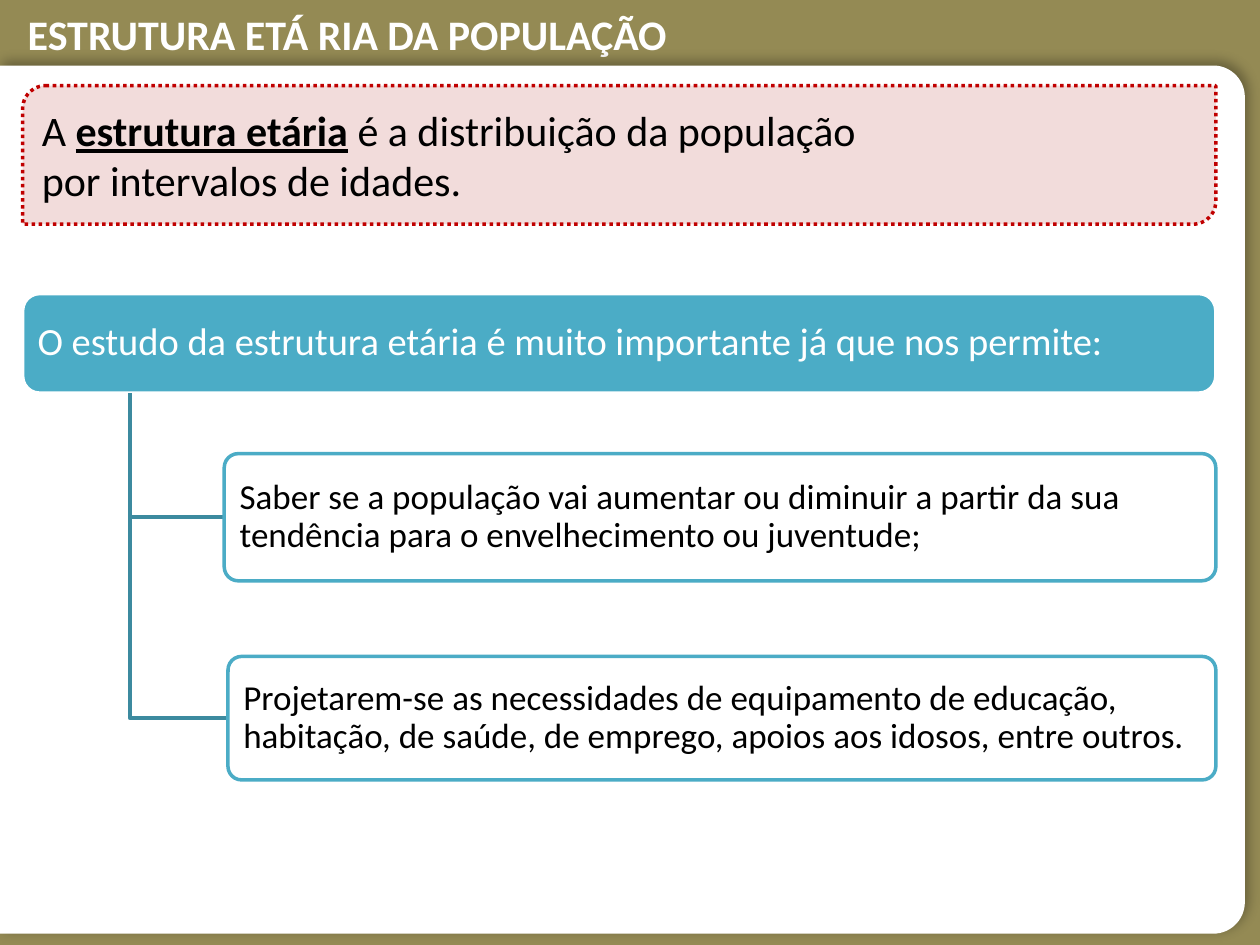
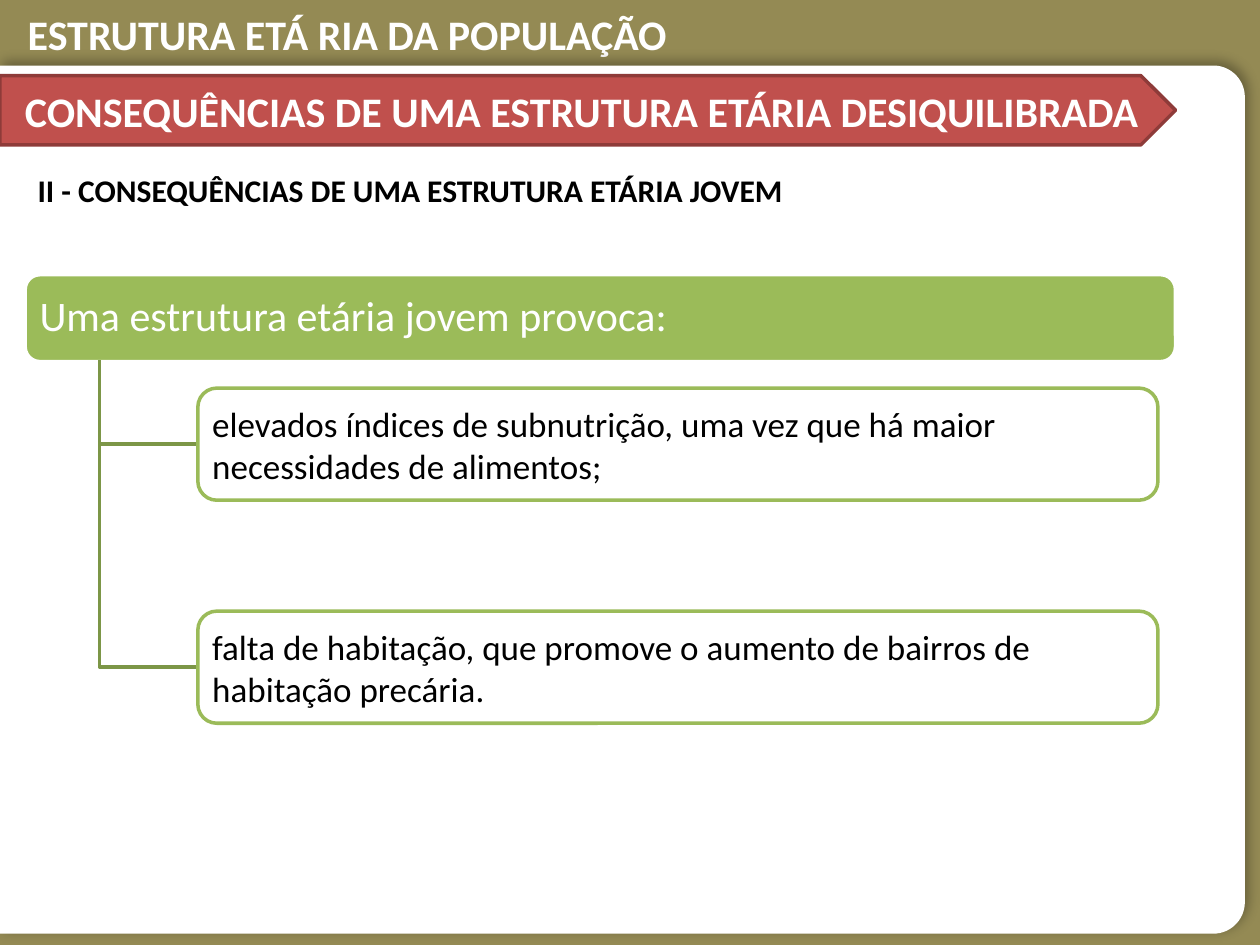
from math import cos, pi, sin

from lxml.etree import SubElement
from pptx import Presentation
from pptx.dml.color import RGBColor
from pptx.enum.dml import MSO_LINE
from pptx.enum.shapes import MSO_SHAPE
from pptx.enum.text import MSO_ANCHOR, MSO_AUTO_SIZE, PP_ALIGN
from pptx.oxml.ns import qn
from pptx.util import Inches, Pt

FONT = "Calibri"
WHITE = RGBColor(0xFF, 0xFF, 0xFF)
BLACK = RGBColor(0x00, 0x00, 0x00)
OLIVE = RGBColor(0x94, 0x8A, 0x54)
TEAL = RGBColor(0x4B, 0xAC, 0xC6)
DARK_TEAL = RGBColor(0x3C, 0x8A, 0x9F)
GREEN = RGBColor(0x9B, 0xBB, 0x59)
DARK_GREEN = RGBColor(0x7C, 0x96, 0x47)
RED = RGBColor(0xC0, 0x50, 0x4D)
DARK_RED = RGBColor(0x8E, 0x3B, 0x39)
PINK = RGBColor(0xF2, 0xDC, 0xDB)
BORDER_RED = RGBColor(0xC0, 0x00, 0x00)

TITLE = "ESTRUTURA ETÁ RIA DA POPULAÇÃO"
PANEL_TOP, PANEL_RIGHT, PANEL_BOTTOM, PANEL_RADIUS = 0.52, 9.88, 7.41, 0.25


class SlideBuilder:
    """Holds the deck's style and the slide being built."""

    def __init__(self, deck):
        self.deck = deck
        self.page = None

    def new_page(self):
        self.page = self.deck.slides.add_slide(self.deck.slide_layouts[5])
        fill = self.page.background.fill
        fill.solid()
        fill.fore_color.rgb = OLIVE
        title = self.page.shapes.title
        self.place(title, (0.12, 0.02, 8.03, 0.5))
        self.set_text(title, TITLE, 24, WHITE, bold=True, anchor=MSO_ANCHOR.TOP)
        self.panel()

    def place(self, shape, at):
        shape.left, shape.top, shape.width, shape.height = map(Inches, at)

    def set_text(self, shape, text, size, color, bold=False, anchor=MSO_ANCHOR.MIDDLE,
                 insets=(0.1, 0.05), spacing=None, align=PP_ALIGN.LEFT):
        frame = shape.text_frame
        frame.text = text
        frame.word_wrap = True
        frame.auto_size = MSO_AUTO_SIZE.NONE
        frame.vertical_anchor = anchor
        frame.margin_left = frame.margin_right = Inches(insets[0])
        frame.margin_top = frame.margin_bottom = Inches(insets[1])
        para = frame.paragraphs[0]
        para.alignment = align
        para.line_spacing = spacing
        for span in para.runs:
            self.style(span, size, color, bold)
        return para

    def style(self, span, size, color, bold=False, underline=False):
        font = span.font
        font.name, font.size, font.bold = FONT, Pt(size), bold
        font.underline = underline
        font.color.rgb = color

    def outline(self, points, closed):
        """Freeform through points given in inches."""
        corners = [(Inches(x), Inches(y)) for x, y in points]
        builder = self.page.shapes.build_freeform(*corners[0])
        builder.add_line_segments(corners[1:], close=closed)
        shape = builder.convert_to_shape()
        shape.shadow.inherit = False
        return shape

    def panel(self):
        """White sheet with rounded right corners and a soft shadow."""
        points = [(0, PANEL_BOTTOM), (0, PANEL_TOP)]
        center_x = PANEL_RIGHT - PANEL_RADIUS
        corners = ((PANEL_TOP + PANEL_RADIUS, -90), (PANEL_BOTTOM - PANEL_RADIUS, 0))
        for center_y, start in corners:
            for degrees in range(start, start + 91, 6):
                angle = degrees * pi / 180
                points.append((center_x + PANEL_RADIUS * cos(angle),
                               center_y + PANEL_RADIUS * sin(angle)))
        sheet = self.outline(points, closed=True)
        sheet.fill.solid()
        sheet.fill.fore_color.rgb = WHITE
        sheet.line.fill.background()
        effects = sheet._element.spPr.find(qn("a:effectLst"))
        shadow = SubElement(effects, qn("a:outerShdw"), blurRad=str(Pt(7)),
                            dist=str(Pt(3)), dir=str(315 * 60000))
        tint = SubElement(shadow, qn("a:srgbClr"), val="000000")
        SubElement(tint, qn("a:alpha"), val="30000")

    def box(self, kind, at, fill, line, radius=None):
        shape = self.page.shapes.add_shape(kind, *map(Inches, at))
        shape.shadow.inherit = False
        shape.fill.solid()
        shape.fill.fore_color.rgb = fill
        shape.line.color.rgb = line
        shape.line.width = Pt(2)
        if radius:
            shape.adjustments[0] = radius
        return shape

    def header(self, at, text, size, color, align=PP_ALIGN.LEFT):
        bar = self.box(MSO_SHAPE.ROUNDED_RECTANGLE, at, color, WHITE, 0.17)
        self.set_text(bar, text, size, WHITE, insets=(0.08, 0.06), spacing=0.9, align=align)

    def branch(self, trunk, start, at, text, line, border, radius, insets, spacing=None):
        """Elbow line from the trunk to a bordered card."""
        left, top, _, height = at
        middle = top + height / 2
        elbow = self.outline([(trunk, start), (trunk, middle), (left, middle)], closed=False)
        elbow.fill.background()
        elbow.line.color.rgb = line
        elbow.line.width = Pt(2)
        card = self.box(MSO_SHAPE.ROUNDED_RECTANGLE, at, WHITE, border, radius)
        self.set_text(card, text, 20, BLACK, insets=insets, spacing=spacing)

    def definition(self, at, before, term, after, last_line):
        box = self.box(MSO_SHAPE.ROUND_2_DIAG_RECTANGLE, at, PINK, BORDER_RED)
        box.line.dash_style = MSO_LINE.ROUND_DOT
        para = self.set_text(box, before, 24, BLACK)
        for text, strong in ((term, True), (after, False), (last_line, False)):
            if text == last_line:
                para.add_line_break()
            span = para.add_run()
            span.text = text
            self.style(span, 24, BLACK, strong, strong)

    def banner(self, at, text):
        arrow = self.box(MSO_SHAPE.PENTAGON, at, RED, DARK_RED)
        para = self.set_text(arrow, text, 24, WHITE, bold=True)
        para._p.get_or_add_pPr().set("marL", str(Inches(0.1)))

    def label(self, at, text):
        box = self.page.shapes.add_textbox(*map(Inches, at))
        self.set_text(box, text, 18, BLACK, bold=True)


def build_importance(builder):
    builder.new_page()
    builder.header((0.18, 2.33, 9.47, 0.79),
                   "O estudo da estrutura etária é muito importante já que nos permite:",
                   22, TEAL)
    cards = (
        ((1.78, 3.6, 7.87, 1.01), "Saber se a população vai aumentar ou diminuir a partir "
         "da sua tendência para o envelhecimento ou juventude;"),
        ((1.81, 5.21, 7.84, 0.98), "Projetarem-se as necessidades de equipamento de educação, "
         "habitação, de saúde, de emprego, apoios aos idosos, entre outros."),
    )
    for at, text in cards:
        builder.branch(1.03, 3.12, at, text, DARK_TEAL, TEAL, 0.11, (0.09, 0.07), 0.9)
    builder.definition((0.18, 0.68, 9.47, 1.1), "A ", "estrutura etária",
                       " é a distribuição da população", "por intervalos de idades.")


def build_consequences(builder):
    builder.new_page()
    builder.label((0.2, 1.23, 7.72, 0.55), "II - CONSEQUÊNCIAS DE UMA ESTRUTURA ETÁRIA JOVEM")
    builder.banner((0, 0.6, 9.33, 0.55), "CONSEQUÊNCIAS DE UMA ESTRUTURA ETÁRIA DESIQUILIBRADA")
    builder.header((0.2, 2.18, 9.13, 0.69), "Uma estrutura etária jovem provoca:",
                   24, GREEN, PP_ALIGN.JUSTIFY)
    cards = (
        (2.86, 3.08, "elevados índices de subnutrição, uma vez que há maior "
         "necessidades de alimentos;"),
        (3.51, 4.85, "falta de habitação, que promove o aumento de bairros de "
         "habitação precária."),
    )
    for start, top, text in cards:
        builder.branch(0.79, start, (1.57, top, 7.62, 0.89), text,
                       DARK_GREEN, GREEN, 0.17, (0.07, 0.05))


def main():
    deck = Presentation()
    deck.slide_width, deck.slide_height = Inches(10), Inches(7.5)
    builder = SlideBuilder(deck)
    build_importance(builder)
    build_consequences(builder)
    deck.save("out.pptx")


if __name__ == "__main__":
    main()
